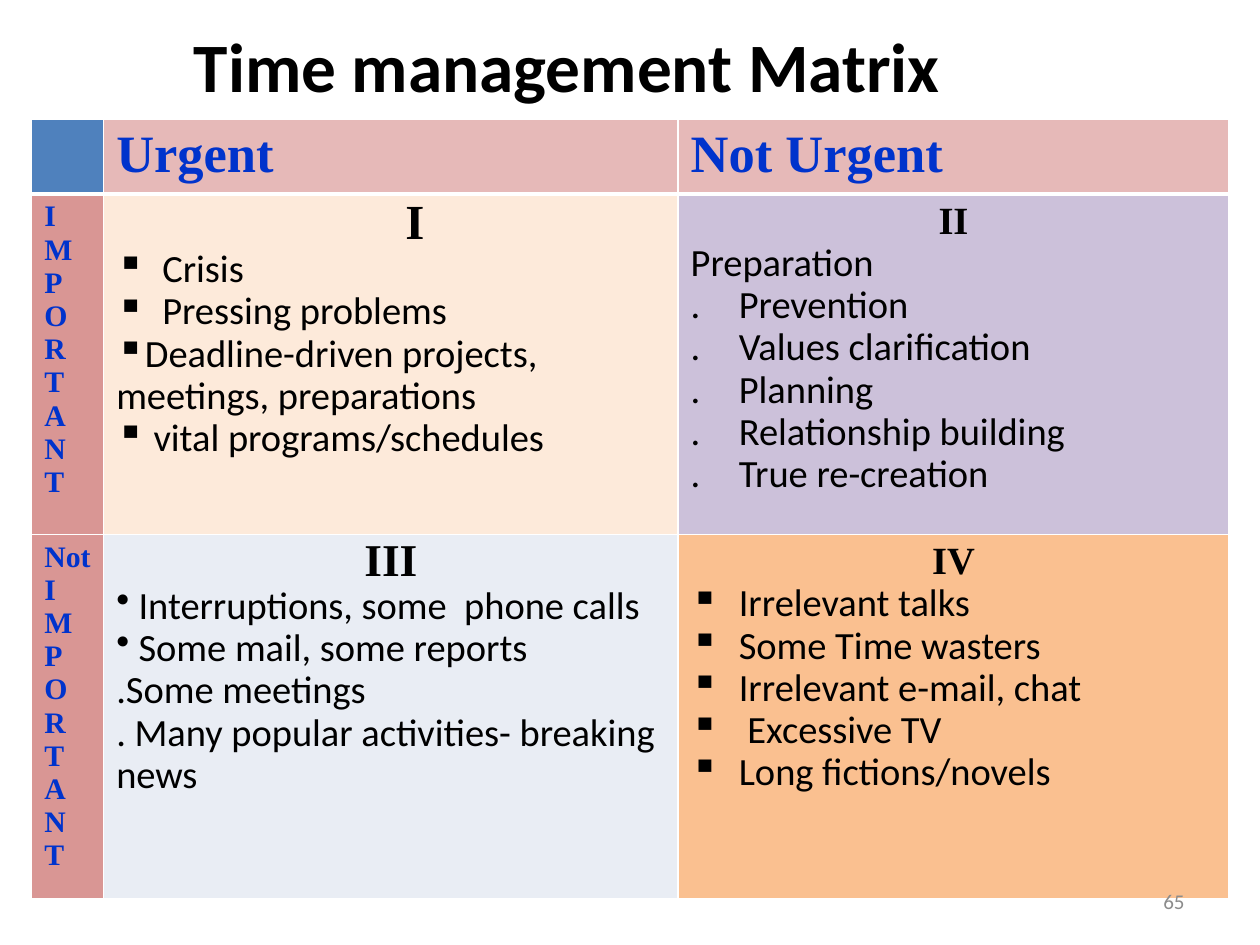
from lxml import etree
from pptx import Presentation
from pptx.dml.color import RGBColor
from pptx.enum.text import MSO_ANCHOR, PP_ALIGN
from pptx.oxml.ns import qn
from pptx.util import Cm, Pt

CENTER, RIGHT = PP_ALIGN.CENTER, PP_ALIGN.RIGHT
MIDDLE = MSO_ANCHOR.MIDDLE

BLACK = RGBColor(0x00, 0x00, 0x00)
WHITE = RGBColor(0xFF, 0xFF, 0xFF)
GREY = RGBColor(0x8C, 0x8C, 0x8C)
LABEL_BLUE = RGBColor(0x00, 0x33, 0xCC)
CORNER_BLUE = RGBColor(0x4F, 0x81, 0xBD)
HEADER_PINK = RGBColor(0xE6, 0xB9, 0xB8)
SIDE_PINK = RGBColor(0xD9, 0x96, 0x94)
PEACH = RGBColor(0xFD, 0xEA, 0xDA)
LILAC = RGBColor(0xCC, 0xC1, 0xDA)
PALE_BLUE = RGBColor(0xE9, 0xED, 0xF4)
ORANGE = RGBColor(0xFA, 0xC0, 0x90)

SANS, SERIF = "Calibri", "Times New Roman"
TAB = Cm(0.97)
COLUMN_WIDTHS = [Cm(1.45), Cm(11.58), Cm(11.1)]
ROW_HEIGHTS = [Cm(1.5), Cm(6.86), Cm(7.34)]

# Position: fill, heading, heading size, heading spacing, hanging indent, lines.
# Each line is a bullet character (or None) and its text.
QUADRANTS = {
    (1, 1): (PEACH, "\tI", 28, 0.9, False, [
        ("▪", "  Crisis"),
        ("▪", "  Pressing problems"),
        ("▪", "Deadline-driven projects, \tmeetings, preparations"),
        ("▪", " vital programs/schedules"),
    ]),
    (1, 2): (LILAC, "II", 22, 1.0, False, [
        (None, "Preparation"),
        (None, ". \tPrevention"),
        (None, ". \tValues clarification"),
        (None, ". \tPlanning"),
        (None, ". \tRelationship building"),
        (None, ". \tTrue re-creation"),
    ]),
    (2, 1): (PALE_BLUE, "III", 26, 0.9, False, [
        ("•", " Interruptions, some  phone calls"),
        ("•", " Some mail, some reports"),
        (None, ".Some meetings"),
        (None, ". Many popular activities- breaking news"),
    ]),
    (2, 2): (ORANGE, "IV", 22, 1.0, True, [
        ("▪", "Irrelevant talks"),
        ("▪", "Some Time wasters"),
        ("▪", "Irrelevant e-mail, chat"),
        ("▪", " Excessive TV"),
        ("▪", "Long fictions/novels"),
    ]),
}


def format_runs(para, size, font, color, bold=False):
    for span in para.runs:
        span.font.size = Pt(size)
        span.font.name = font
        span.font.color.rgb = color
        span.font.bold = bold


def set_bullet_and_tab(para, bullet, hanging):
    props = para._p.get_or_add_pPr()
    if hanging:
        props.set("marL", str(TAB))
        props.set("indent", str(-TAB))
    if bullet:
        etree.SubElement(props, qn("a:buChar"), char=bullet)
    tabs = etree.SubElement(props, qn("a:tabLst"))
    etree.SubElement(tabs, qn("a:tab"), pos=str(TAB), algn="l")


def style_cell(cell, fill, bottom_width=1):
    """Fill the cell and give it white borders."""
    cell.fill.solid()
    cell.fill.fore_color.rgb = fill
    props = cell._tc.get_or_add_tcPr()
    widths = {"a:lnL": 1, "a:lnR": 1, "a:lnT": 1, "a:lnB": bottom_width}
    for index, (side, width) in enumerate(widths.items()):
        line = etree.Element(qn(side), w=str(Pt(width)))
        paint = etree.SubElement(line, qn("a:solidFill"))
        etree.SubElement(paint, qn("a:srgbClr"), val=str(WHITE))
        props.insert(index, line)


def fill_label(cell, text, size):
    cell.text_frame.text = text
    for para in cell.text_frame.paragraphs:
        format_runs(para, size, SERIF, LABEL_BLUE, bold=True)


def fill_quadrant(cell, heading, size, spacing, hanging, lines):
    frame = cell.text_frame
    frame.text = heading
    first = frame.paragraphs[0]
    first.alignment = CENTER
    first.line_spacing = spacing
    set_bullet_and_tab(first, None, False)
    format_runs(first, size, SERIF, BLACK, bold=True)
    for bullet, text in lines:
        para = frame.add_paragraph()
        para.text = text
        para.line_spacing = 0.9
        set_bullet_and_tab(para, bullet, hanging)
        format_runs(para, 22, SANS, BLACK)


def add_title(page, text):
    title = page.shapes.title
    title.left, title.top = Cm(1.27), Cm(0.64)
    title.width, title.height = Cm(20.32), Cm(1.35)
    frame = title.text_frame
    frame.text = text
    frame.vertical_anchor = MIDDLE
    frame.paragraphs[0].alignment = CENTER
    format_runs(frame.paragraphs[0], 39.6, SANS, BLACK, bold=True)


def add_matrix(page):
    table = page.shapes.add_table(
        3, 3, Cm(0.64), Cm(2.41), sum(COLUMN_WIDTHS), sum(ROW_HEIGHTS)).table
    for column, width in zip(table.columns, COLUMN_WIDTHS):
        column.width = width
    for row, height in zip(table.rows, ROW_HEIGHTS):
        row.height = height

    style_cell(table.cell(0, 0), CORNER_BLUE, bottom_width=3)
    for column, text in enumerate(["Urgent", "Not Urgent"], start=1):
        style_cell(table.cell(0, column), HEADER_PINK, bottom_width=3)
        fill_label(table.cell(0, column), text, 30)

    letters = list("IMPORTANT")
    for row, words in enumerate([letters, ["Not"] + letters], start=1):
        style_cell(table.cell(row, 0), SIDE_PINK)
        fill_label(table.cell(row, 0), "\n".join(words), 17)

    for (row, column), (fill, *content) in QUADRANTS.items():
        style_cell(table.cell(row, column), fill)
        fill_quadrant(table.cell(row, column), *content)


def add_page_number(page, number):
    box = page.shapes.add_textbox(Cm(18.21), Cm(17.65), Cm(5.92), Cm(1.02))
    frame = box.text_frame
    frame.word_wrap = True
    frame.vertical_anchor = MIDDLE
    frame.text = number
    frame.paragraphs[0].alignment = RIGHT
    format_runs(frame.paragraphs[0], 12, SANS, GREY)


def main():
    deck = Presentation()
    deck.slide_width, deck.slide_height = Cm(25.4), Cm(19.05)
    page = deck.slides.add_slide(deck.slide_layouts[5])
    add_title(page, "Time management Matrix")
    add_matrix(page)
    add_page_number(page, "65")
    deck.save("out.pptx")


if __name__ == "__main__":
    main()
